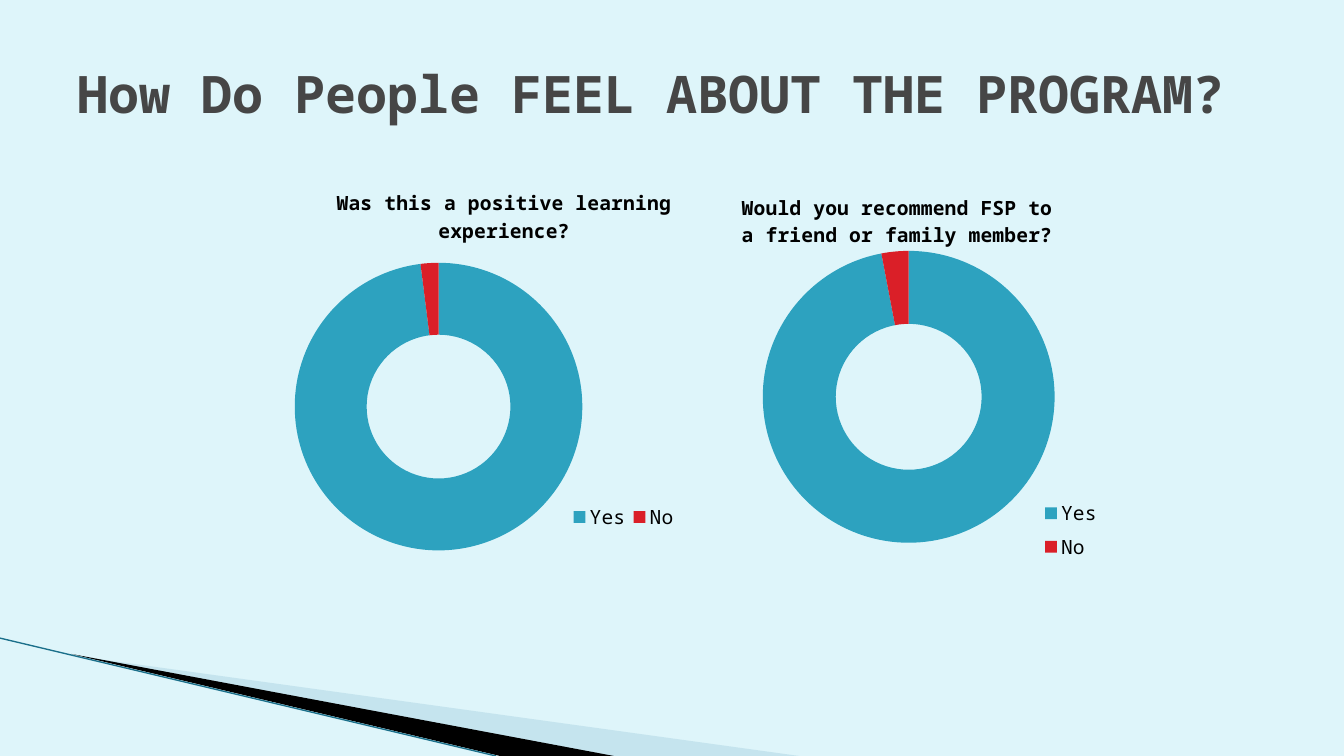
import pptx
import pptx.chart.data
import pptx.dml.color
import pptx.enum.chart
import pptx.enum.shapes
import pptx.enum.text
import pptx.oxml
import pptx.oxml.ns
import pptx.util
from pptx.util import Cm, Pt

FONT = "Noto Sans Mono"
COLORS = {
    "background": "DEF5FA", "title": "464646", "text": "000000",
    "pale": "A0CBDC", "black": "000000", "line": "1A6F8A",
    "Yes": "2DA2BF", "No": "DA1F28",
}


def rgb(name):
    return pptx.dml.color.RGBColor.from_string(COLORS[name])


def set_layout(parent, index, inner=False, **box):
    """Place a chart part by fractions of the chart's size."""
    for old in parent.findall(pptx.oxml.ns.qn("c:layout")):
        parent.remove(old)
    target = '<c:layoutTarget val="inner"/>' if inner else ""
    modes = '<c:xMode val="edge"/><c:yMode val="edge"/>'
    values = "".join(f'<c:{key} val="{value}"/>' for key, value in box.items())
    parent.insert(index, pptx.oxml.parse_xml(
        f'<c:layout {pptx.oxml.ns.nsdecls("c")}><c:manualLayout>'
        f"{target}{modes}{values}</c:manualLayout></c:layout>"))


prs = pptx.Presentation()
prs.slide_width, prs.slide_height = Cm(33.87), Cm(19.05)
s = prs.slides.add_slide(prs.slide_layouts[6])
s.background.fill.solid()
s.background.fill.fore_color.rgb = rgb("background")

# Corner wedges
wedges = [
    ("pale", [(1.85, 16.52), (20.14, 19.05), (15.44, 19.05)]),
    ("black", [(1.8, 16.48), (15.47, 19.05), (12.6, 19.05)]),
]
for color, points in wedges:
    points = [(Cm(x), Cm(y)) for x, y in points]
    builder = s.shapes.build_freeform(*points[0])
    builder.add_line_segments(points[1:])
    sp = builder.convert_to_shape()
    sp.shadow.inherit = False
    sp.fill.solid()
    sp.fill.fore_color.rgb = rgb(color)
    sp.line.fill.background()
    if color == "pale":
        fill_color = sp.fill._xPr.find(".//" + pptx.oxml.ns.qn("a:srgbClr"))
        fill_color.append(pptx.oxml.parse_xml(
            f'<a:alpha {pptx.oxml.ns.nsdecls("a")} val="40000"/>'))

edge = s.shapes.add_connector(
    pptx.enum.shapes.MSO_CONNECTOR.STRAIGHT, Cm(0), Cm(16.08), Cm(12.5), Cm(19.05))
edge.line.color.rgb = rgb("line")
edge.line.width = Pt(0.95)
edge._element.spPr.append(pptx.oxml.parse_xml(
    f'<a:effectLst {pptx.oxml.ns.nsdecls("a")}/>'))

# Title
tf = s.shapes.add_textbox(Cm(1.7), Cm(0.76), Cm(30.48), Cm(3.18)).text_frame
tf.word_wrap = True
tf.vertical_anchor = pptx.enum.text.MSO_ANCHOR.MIDDLE
r = tf.paragraphs[0].add_run()
r.text = "How Do People FEEL ABOUT THE PROGRAM?"
r.font.name, r.font.size, r.font.bold = FONT, Pt(36.9), True
r.font.color.rgb = rgb("title")

# Doughnuts: question, values, frame, title place, plot place, legend place, overlay
doughnuts = [
    ("Was this a positive learning experience?", (98, 2),
     (6.55, 4.24, 10.85, 9.93), dict(x=0.17, y=0.04),
     dict(x=0.08, y=0.24, w=0.67, h=0.73),
     dict(x=0.71, y=0.84, w=0.27, h=0.09), False),
    ("Would you recommend FSP to a friend or family member?", (97, 3),
     (17.98, 4.65, 10.36, 9.73), dict(x=0.06, y=0.01),
     dict(x=0.12, y=0.17, w=0.71, h=0.76),
     dict(x=0.79, y=0.8, w=0.16, h=0.19), True),
]
for question, values, frame, title_at, plot_at, legend_at, overlay in doughnuts:
    data = pptx.chart.data.CategoryChartData()
    data.categories = ["Yes", "No"]
    data.add_series(question, values)
    chart = s.shapes.add_chart(
        pptx.enum.chart.XL_CHART_TYPE.DOUGHNUT, *map(Cm, frame), data).chart
    chart.font.name, chart.font.size = FONT, Pt(10)
    chart.font.color.rgb = rgb("text")

    chart.has_title = True
    r = chart.chart_title.text_frame.paragraphs[0].add_run()
    r.text = question
    r.font.name, r.font.size, r.font.bold = FONT, Pt(14), True
    r.font.color.rgb = rgb("text")
    set_layout(chart.chart_title._element, 1, **title_at)

    plot = chart.plots[0]
    plot.vary_by_categories = True
    for i, answer in enumerate(plot.categories):
        point = plot.series[0].points[i].format
        point.fill.solid()
        point.fill.fore_color.rgb = rgb(answer)
        point.line.fill.background()
    set_layout(plot._element.getparent(), 0, inner=True, **plot_at)

    chart.has_legend = True
    chart.legend.position = pptx.enum.chart.XL_LEGEND_POSITION.RIGHT
    chart.legend.include_in_layout = overlay
    chart.legend.font.name, chart.legend.font.size = FONT, Pt(14)
    chart.legend.font.color.rgb = rgb("text")
    set_layout(chart.legend._element, 1, **legend_at)

prs.save("out.pptx")
